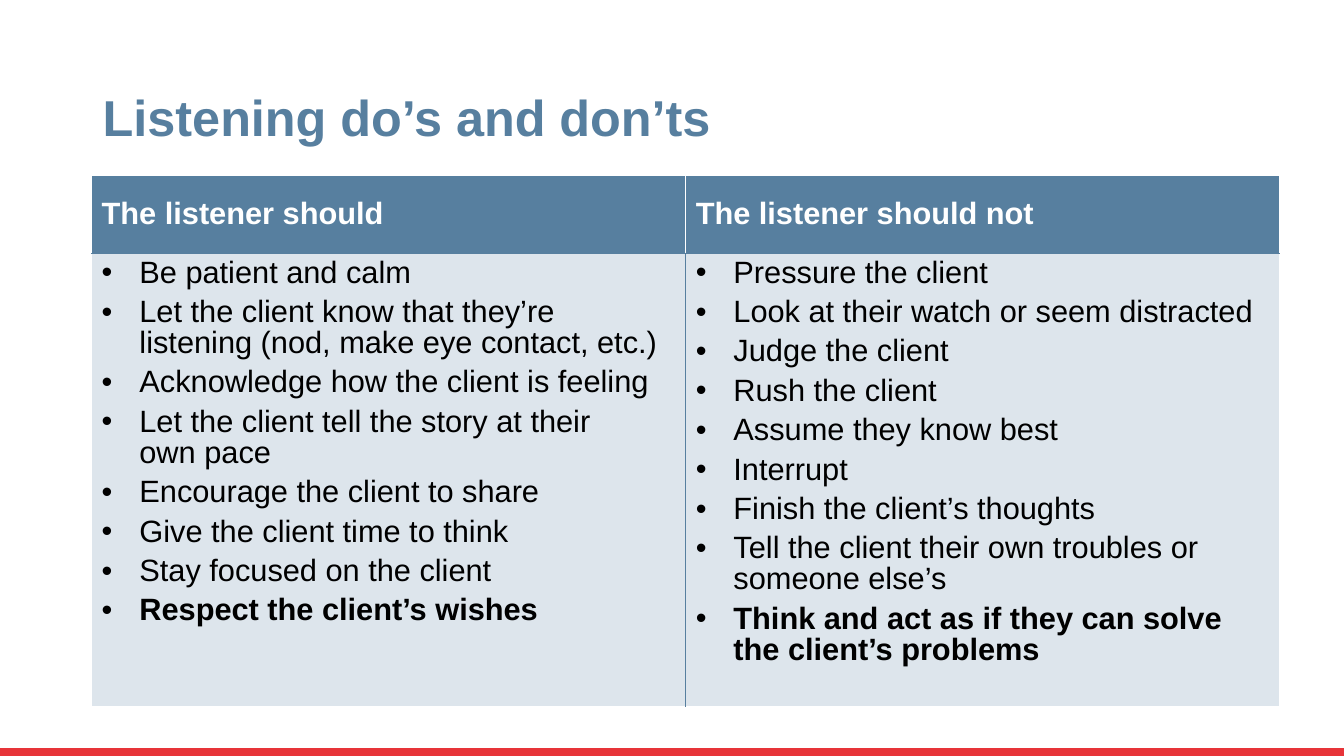
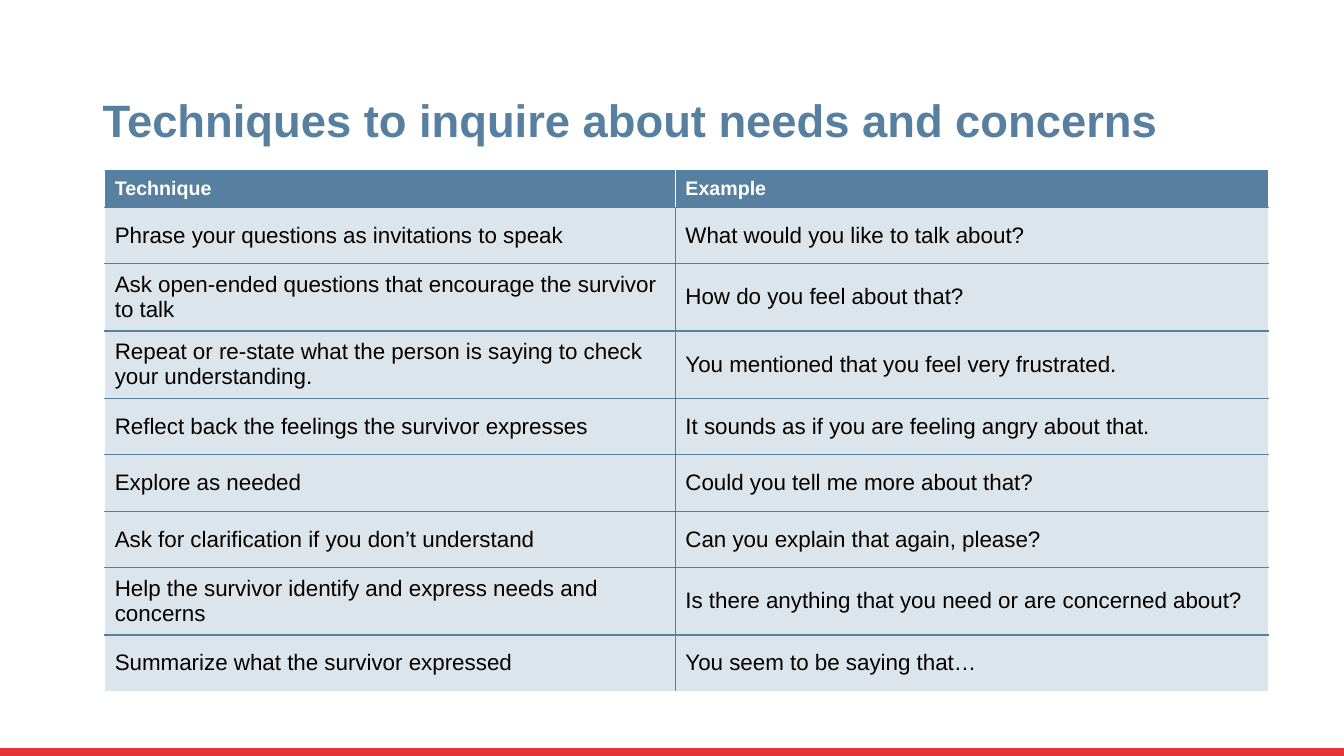
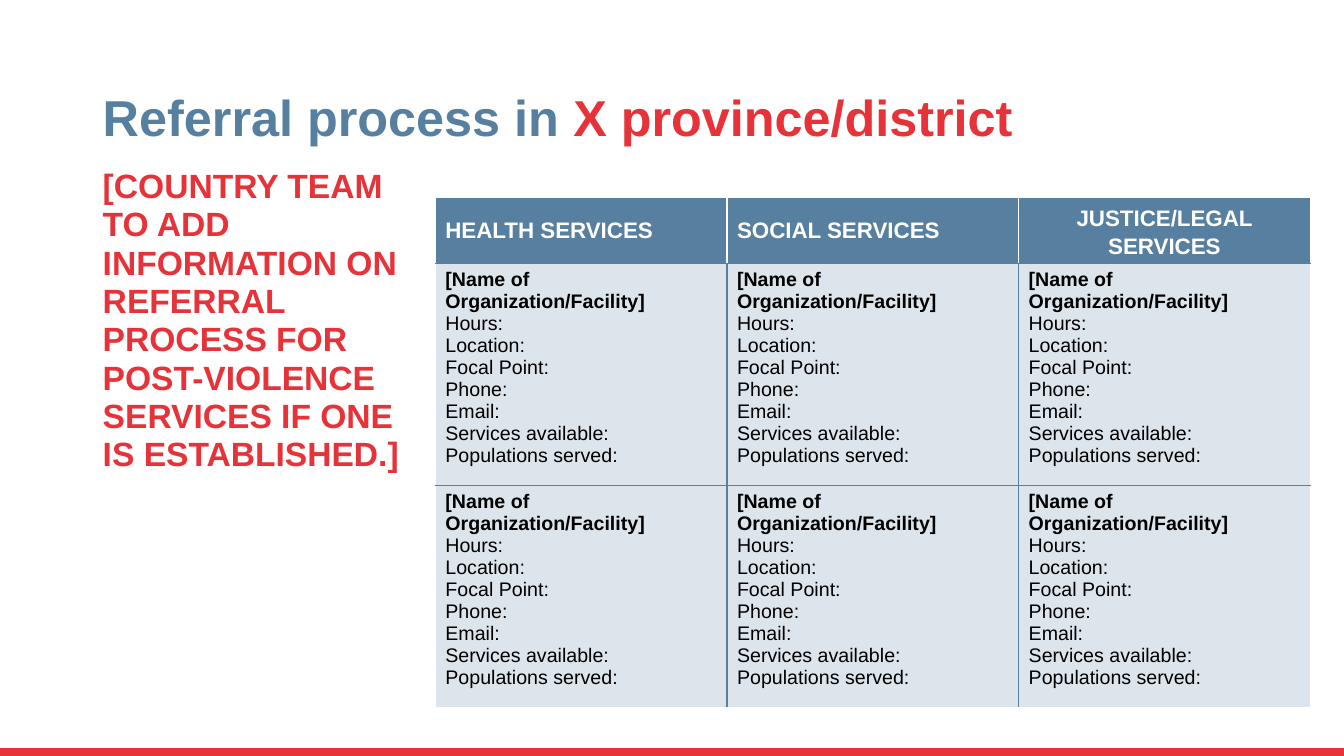
"""Builds three training slides on listening to and referring survivors."""
from lxml.etree import SubElement
from pptx import Presentation
from pptx.dml.color import RGBColor
from pptx.enum.shapes import MSO_SHAPE
from pptx.enum.text import MSO_ANCHOR as ANCHOR, PP_ALIGN as ALIGN
from pptx.oxml.ns import qn
from pptx.util import Cm, Pt

BLUE = RGBColor(0x57, 0x7F, 0x9F)
TINT = RGBColor(0xDD, 0xE5, 0xEC)
BAND_RED = RGBColor(0xE7, 0x34, 0x39)
TEXT_RED = RGBColor(0xE6, 0x33, 0x39)
WHITE = RGBColor(0xFF, 0xFF, 0xFF)
BLACK = RGBColor(0, 0, 0)
FONT = "Arial"
WIDTH, HEIGHT = Cm(33.87), Cm(19.05)

SHOULD = [
    "Be patient and calm",
    "Let the client know that they’re listening (nod, make eye contact, etc.)",
    "Acknowledge how the client is feeling",
    "Let the client tell the story at their\nown pace",
    "Encourage the client to share",
    "Give the client time to think",
    "Stay focused on the client",
    "Respect the client’s wishes",
]
SHOULD_NOT = [
    "Pressure the client",
    "Look at their watch or seem distracted",
    "Judge the client",
    "Rush the client",
    "Assume they know best",
    "Interrupt",
    "Finish the client’s thoughts",
    "Tell the client their own troubles or someone else’s",
    "Think and act as if they can solve the client’s problems",
]
TECHNIQUES = [
    ("Phrase your questions as invitations to speak",
     "What would you like to talk about?"),
    ("Ask open-ended questions that encourage the survivor to talk",
     "How do you feel about that?"),
    ("Repeat or re-state what the person is saying to check your understanding.",
     "You mentioned that you feel very frustrated."),
    ("Reflect back the feelings the survivor expresses",
     "It sounds as if you are feeling angry about that."),
    ("Explore as needed", "Could you tell me more about that?"),
    ("Ask for clarification if you don’t understand",
     "Can you explain that again, please?"),
    ("Help the survivor identify and express needs and concerns",
     "Is there anything that you need or are concerned about?"),
    ("Summarize what the survivor expressed", "You seem to be saying that…"),
]
FACILITY = [
    "[Name of Organization/Facility]", "Hours:", "Location:", "Focal Point:",
    "Phone:", "Email:", "Services available:", "Populations served:",
]


class Deck:
    def __init__(self):
        self.prs = Presentation()
        self.prs.slide_width, self.prs.slide_height = WIDTH, HEIGHT
        self.s = None

    def slide(self, *title, size=36):
        self.s = self.prs.slides.add_slide(self.prs.slide_layouts[6])
        band = Cm(0.2)
        sp = self.s.shapes.add_shape(
            MSO_SHAPE.RECTANGLE, 0, HEIGHT - band, WIDTH, band)
        sp.shadow.inherit = False
        sp.fill.solid()
        sp.fill.fore_color.rgb = BAND_RED
        sp.line.fill.background()
        self.text((2.34, 1.63, 29.21, 2.21), title, size, 0.9, ANCHOR.BOTTOM)

    def style(self, r, size, color, bold):
        r.font.name, r.font.size, r.font.bold = FONT, Pt(size), bold
        r.font.color.rgb = color

    def text(self, box, parts, size, spacing, anchor=ANCHOR.TOP):
        tf = self.s.shapes.add_textbox(*map(Cm, box)).text_frame
        tf.word_wrap = True
        tf.vertical_anchor = anchor
        p = tf.paragraphs[0]
        p.line_spacing = spacing
        for text, color in parts:
            r = p.add_run()
            r.text = text
            self.style(r, size, color, True)

    def bullet(self, p):
        pPr = p._p.get_or_add_pPr()
        pPr.set("marL", str(Cm(0.95)))
        pPr.set("indent", str(-Cm(0.95)))
        SubElement(pPr, qn("a:buFont")).set("typeface", FONT)
        SubElement(pPr, qn("a:buChar")).set("char", "•")
        p.line_spacing = 0.9
        p.space_after = Pt(6)

    def borders(self, cell, colors):
        tcPr = cell._tc.get_or_add_tcPr()
        for i, (side, color) in enumerate(zip("LRTB", colors)):
            ln = SubElement(tcPr, qn(f"a:ln{side}"), w=str(Pt(1)))
            fill = SubElement(ln, qn("a:solidFill"))
            SubElement(fill, qn("a:srgbClr")).set("val", str(color))
            tcPr.insert(i, ln)

    def cell(self, cell, lines, size, color, fill, anchor, bold, bullets=False):
        cell.fill.solid()
        cell.fill.fore_color.rgb = fill
        cell.vertical_anchor = anchor
        tf = cell.text_frame
        for i, line in enumerate(lines):
            p = tf.add_paragraph() if i else tf.paragraphs[0]
            p.text = line
            if bullets:
                self.bullet(p)
            for r in p.runs:
                self.style(r, size, color, i == bold)

    def table(self, left, top, cols, heights, head, rows, head_size, size,
              anchor=ANCHOR.TOP, bold=None, bullets=False):
        table = self.s.shapes.add_table(
            len(heights), len(cols), Cm(left), Cm(top),
            Cm(sum(cols)), Cm(sum(heights))).table
        for col, width in zip(table.columns, cols):
            col.width = Cm(width)
        for row, height in zip(table.rows, heights):
            row.height = Cm(height)
        last_row, last_col = len(heights) - 1, len(cols) - 1
        for y, texts in enumerate([[[h] for h in head]] + rows):
            for x, lines in enumerate(texts):
                c = table.cell(y, x)
                if y == 0:
                    self.cell(c, lines, head_size, WHITE, BLUE, ANCHOR.MIDDLE, 0)
                else:
                    self.cell(c, lines, size, BLACK, TINT, anchor, bold, bullets)
                inner = BLUE if y else WHITE
                self.borders(c, (inner if x else WHITE,
                                 inner if x < last_col else WHITE,
                                 inner,
                                 BLUE if y < last_row else WHITE))
        return table


def main():
    deck = Deck()

    deck.slide(("Listening do’s and don’ts", BLUE))
    table = deck.table(
        2.31, 4.42, [14.97] * 2, [1.96, 11.43],
        ["The listener should", "The listener should not"],
        [[SHOULD, SHOULD_NOT]], 22, 22, bullets=True)
    for x, lines in enumerate((SHOULD, SHOULD_NOT)):
        table.cell(0, x).text_frame.paragraphs[0].space_after = Pt(2)
        for r in table.cell(1, x).text_frame.paragraphs[len(lines) - 1].runs:
            r.font.bold = True

    deck.slide(("Techniques to inquire about needs and concerns", BLUE), size=32.4)
    one_line, two_lines = 1.42, 1.7
    heights = [two_lines if len(technique) > 50 else one_line
               for technique, _ in TECHNIQUES]
    deck.table(
        2.64, 4.27, [14.38, 14.94], [0.95] + heights, ["Technique", "Example"],
        [[[text] for text in pair] for pair in TECHNIQUES], 14, 16, ANCHOR.MIDDLE)

    deck.slide(("Referral process in ", BLUE), ("X province/district", TEXT_RED))
    deck.text(
        (2.34, 4.11, 8.64, 13.69),
        [("[COUNTRY TEAM TO ADD INFORMATION ON REFERRAL PROCESS FOR "
          "POST-VIOLENCE SERVICES IF ONE IS ESTABLISHED.]", TEXT_RED)], 24, 0.95)
    table = deck.table(
        10.97, 4.98, [7.35] * 3, [1.66, 5.26, 5.26],
        ["HEALTH SERVICES", "SOCIAL SERVICES", "JUSTICE/LEGAL SERVICES"],
        [[FACILITY] * 3] * 2, 16, 14, bold=0)
    p = table.cell(0, 2).text_frame.paragraphs[0]
    p.alignment = ALIGN.CENTER
    p.line_spacing = Pt(20)

    deck.prs.save("out.pptx")


if __name__ == "__main__":
    main()
